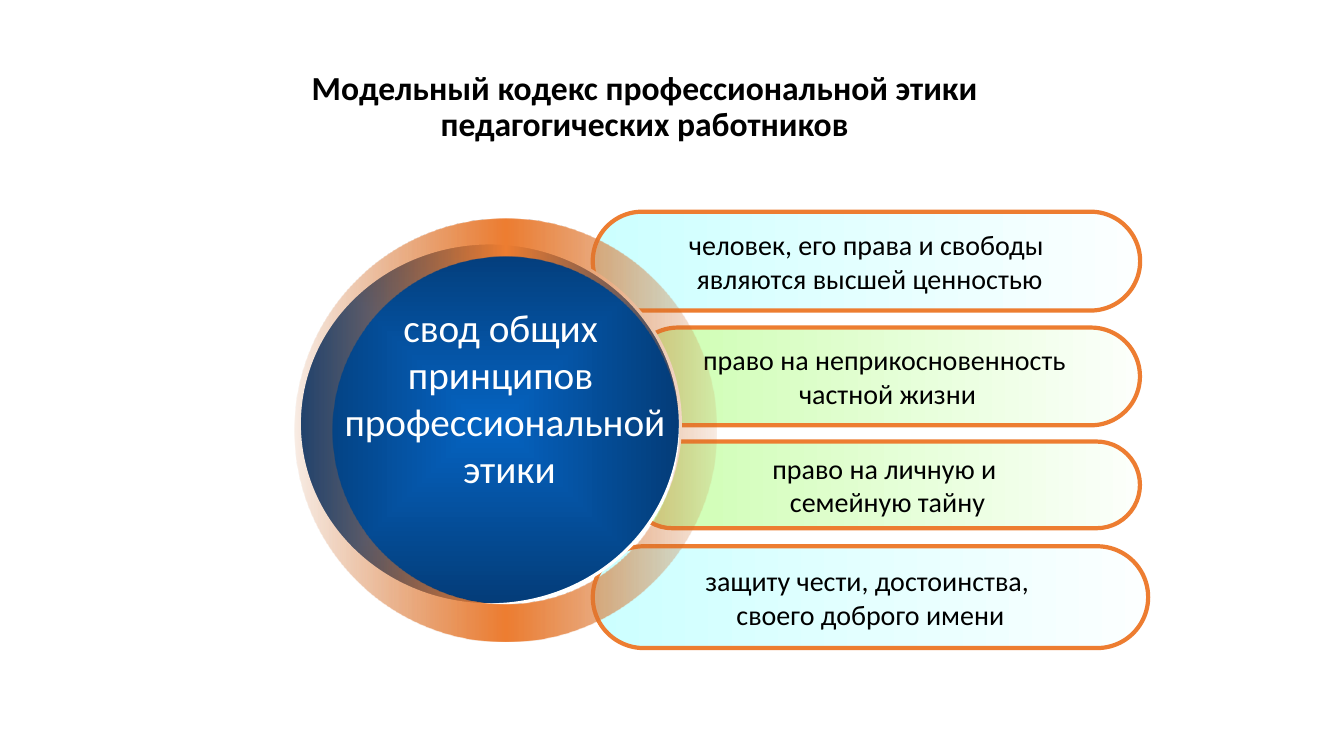
"""Build a slide on the model code of professional ethics for teachers."""
from dataclasses import dataclass

from lxml import etree
from pptx import Presentation
from pptx import util as u
from pptx.dml.color import RGBColor
from pptx.enum import shapes, text
from pptx.oxml import ns

FONT = "Calibri"
ORANGE, BLACK, WHITE = "ED7D31", "000000", "FFFFFF"
LINEAR = {"lin": {"ang": "0", "scaled": "1"}}
CENTRE = {"l": "50000", "t": "50000", "r": "50000", "b": "50000"}


@dataclass(frozen=True)
class Area:
    left: float
    top: float
    width: float
    height: float

    def lengths(self) -> tuple:
        return tuple(u.Pt(v) for v in (self.left, self.top, self.width, self.height))


@dataclass(frozen=True)
class Stop:
    position: int
    color: str
    opacity: int = 100


@dataclass(frozen=True)
class Principle:
    area: Area
    start: str
    end: str
    lines: tuple[str, ...]


AQUA, GREEN = ("CCFFFF", "FCFFFF"), ("CBFEAE", "FCFFFB")
PRINCIPLES = (
    Principle(Area(423.4, 390.2, 396.7, 72.7), *AQUA,
              ("защиту чести, достоинства, ", "своего доброго имени")),
    Principle(Area(449.3, 315.4, 365, 61.9), *GREEN,
              ("право на личную и", " семейную тайну")),
    Principle(Area(449.3, 234, 365, 69.8), *GREEN,
              ("право на неприкосновенность", " частной жизни")),
    Principle(Area(423.4, 151.2, 391, 70.6), *AQUA,
              ("человек, его права и свободы", " являются высшей ценностью")),
)
CORE = Area(213.8, 173.5, 272.2, 258.5)
RING = Area(210.2, 156.2, 301.7, 301.7)
CORE_TEXT = Area(223.2, 213.1, 275, 143.3)
CORE_LINES = ("свод общих ", "принципов ", "профессиональной", " этики")
TITLE = Area(190.8, 37.4, 539.3, 79.2)
TITLE_LINES = ("Модельный кодекс профессиональной этики педагогических работников",)


def rgb(value: str) -> RGBColor:
    return RGBColor.from_string(value)


def child(parent, tag: str, **attributes: str):
    return etree.SubElement(parent, ns.qn(f"a:{tag}"), attributes)


def fill_gradient(shape, stops: tuple[Stop, ...], radial: bool = False) -> None:
    shape.fill.background()
    empty = shape._element.spPr.find(ns.qn("a:noFill"))
    gradient = etree.Element(ns.qn("a:gradFill"), rotWithShape="1")
    stop_list = child(gradient, "gsLst")
    for stop in stops:
        mark = child(stop_list, "gs", pos=str(stop.position * 1000))
        color = child(mark, "srgbClr", val=stop.color)
        if stop.opacity < 100:
            child(color, "alpha", val=str(stop.opacity * 1000))
    if radial:
        child(child(gradient, "path", path="shape"), "fillToRect", **CENTRE)
    else:
        child(gradient, "lin", **LINEAR["lin"])
    empty.getparent().replace(empty, gradient)


def add_shape(page, kind, area: Area, adjustment: float | None = None):
    shape = page.shapes.add_shape(kind, *area.lengths())
    shape.shadow.inherit = False
    if adjustment is not None:
        shape.adjustments[0] = adjustment
    return shape


def outline(shape, color: str, width: float) -> None:
    shape.line.color.rgb = rgb(color)
    shape.line.width = u.Pt(width)


def write(frame, lines: tuple[str, ...], size: float, color: str,
          bold: bool = False, shadow: bool = False) -> None:
    for index, line in enumerate(lines):
        para = frame.add_paragraph() if index else frame.paragraphs[0]
        para.alignment = text.PP_ALIGN.CENTER
        span = para.add_run()
        span.text = line
        span.font.name = FONT
        span.font.size = u.Pt(size)
        span.font.bold = bold
        span.font.color.rgb = rgb(color)
        if shadow:
            effects = etree.Element(ns.qn("a:effectLst"))
            cast = child(effects, "outerShdw", blurRad="38100", dist="38100",
                         dir="2700000", algn="tl")
            child(child(cast, "srgbClr", val=BLACK), "alpha", val="43000")
            span.font._element.find(ns.qn("a:solidFill")).addnext(effects)


def add_principle(page, principle: Principle) -> None:
    box = add_shape(page, shapes.MSO_SHAPE.ROUNDED_RECTANGLE, principle.area, 0.5)
    fill_gradient(box, (Stop(0, principle.start), Stop(100, principle.end)))
    outline(box, ORANGE, 3)
    box.text_frame.word_wrap = False
    box.text_frame.vertical_anchor = text.MSO_ANCHOR.MIDDLE
    write(box.text_frame, principle.lines, 20, BLACK)


def add_title(page) -> None:
    title = page.shapes.title
    title.left, title.top, title.width, title.height = TITLE.lengths()
    title.text_frame.word_wrap = True
    title.text_frame.vertical_anchor = text.MSO_ANCHOR.MIDDLE
    write(title.text_frame, TITLE_LINES, 24, BLACK, bold=True)
    title.text_frame.paragraphs[0].line_spacing = 0.9


def add_core(page) -> None:
    core = add_shape(page, shapes.MSO_SHAPE.OVAL, CORE)
    fill_gradient(core, (Stop(0, "0563C1"), Stop(100, "043C78")), radial=True)
    outline(core, WHITE, 2.25)

    ring = add_shape(page, shapes.MSO_SHAPE.DONUT, RING, 0.09)
    fill_gradient(ring, (Stop(0, "C76929", 12), Stop(50, ORANGE), Stop(100, "C76929", 12)))
    ring.line.fill.background()

    label = page.shapes.add_textbox(*CORE_TEXT.lengths())
    label.text_frame.word_wrap = True
    write(label.text_frame, CORE_LINES, 28, WHITE, shadow=True)


def main() -> None:
    deck = Presentation()
    deck.slide_width, deck.slide_height = u.Pt(960), u.Pt(540)
    page = deck.slides.add_slide(deck.slide_layouts[5])
    add_title(page)
    for principle in PRINCIPLES:
        add_principle(page, principle)
    add_core(page)
    deck.save("out.pptx")


if __name__ == "__main__":
    main()
